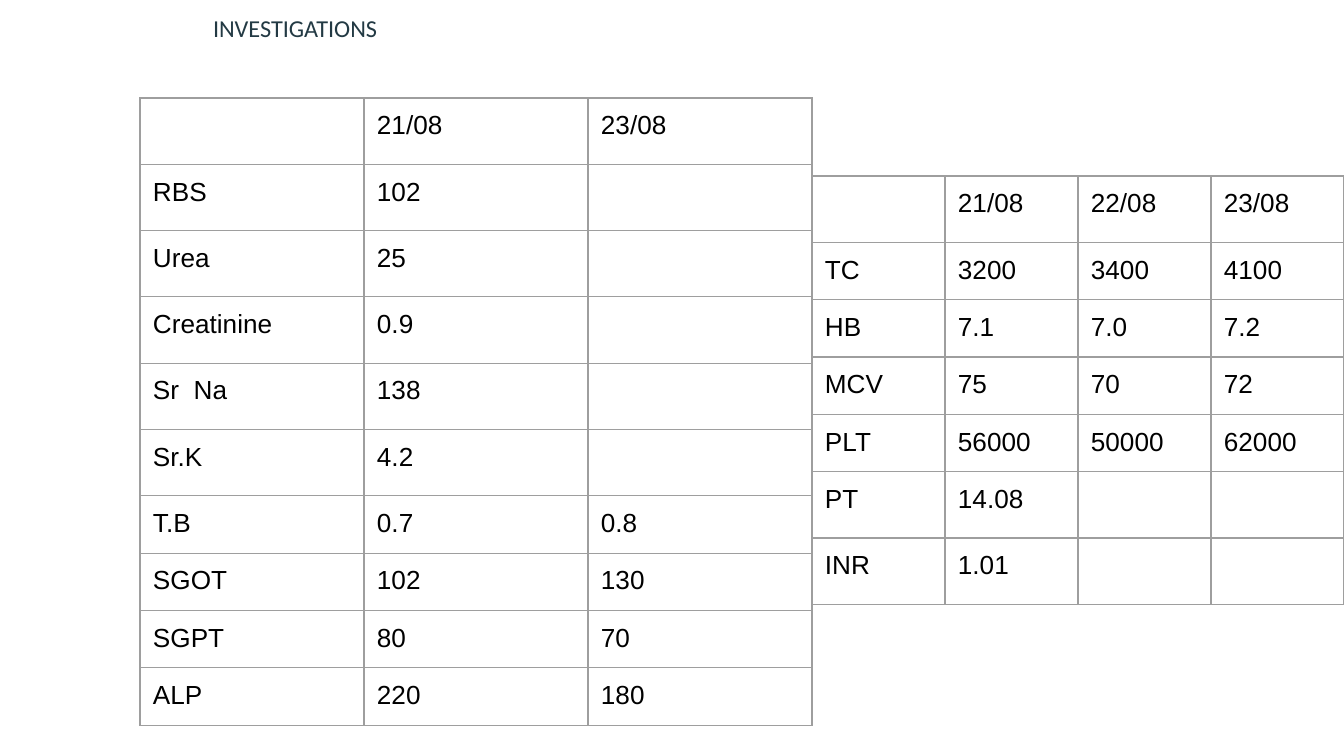
from dataclasses import dataclass

from lxml.etree import SubElement
from pptx import Presentation
from pptx.dml.color import RGBColor
from pptx.enum.text import MSO_ANCHOR, MSO_AUTO_SIZE, PP_ALIGN
from pptx.oxml.ns import qn
from pptx.text.text import Font
from pptx.util import Emu, Pt

EMU_PER_PX = 914400 / 134.4

CHEMISTRY = [
    ("", "21/08", "23/08"),
    ("RBS", "102", ""),
    ("Urea", "25", ""),
    ("Creatinine", "0.9", ""),
    ("Sr  Na", "138", ""),
    ("Sr.K", "4.2", ""),
    ("T.B", "0.7", "0.8"),
    ("SGOT", "102", "130"),
    ("SGPT", "80", "70"),
    ("ALP", "220", "180"),
]
BLOOD_COUNT = [
    ("", "21/08", "22/08", "23/08"),
    ("TC", "3200", "3400", "4100"),
    ("HB", "7.1", "7.0", "7.2"),
    ("MCV", "75", "70", "72"),
    ("PLT", "56000", "50000", "62000"),
    ("PT", "14.08", "", ""),
    ("INR", "1.01", "", ""),
]


def px(length):
    return Emu(round(length * EMU_PER_PX))


@dataclass(frozen=True)
class Theme:
    heading: str = "233A44"
    ink: str = "000000"
    border: str = "9E9E9E"
    heading_font: str = "Calibri"
    body_font: str = "Arial"
    heading_size: float = 13
    body_size: float = 14
    empty_size: float = 18
    border_width: float = 0.75
    inset: int = 13
    row_height: int = 56


class SlideBuilder:
    """Draws styled elements on the current slide."""

    def __init__(self, slide, theme):
        self.slide = slide
        self.theme = theme

    def set_insets(self, target):
        target.margin_left = target.margin_right = px(self.theme.inset)
        target.margin_top = target.margin_bottom = px(self.theme.inset)

    def set_font(self, font, name, size, color):
        font.name = name
        font.size = Pt(size)
        font.color.rgb = RGBColor.from_string(color)

    def title(self, text, left, top, width, height):
        heading = self.slide.shapes.title
        heading.left, heading.top = px(left), px(top)
        heading.width, heading.height = px(width), px(height)
        frame = heading.text_frame
        frame.text = text
        frame.word_wrap = True
        frame.auto_size = MSO_AUTO_SIZE.SHAPE_TO_FIT_TEXT
        frame.vertical_anchor = MSO_ANCHOR.TOP
        self.set_insets(frame)
        paragraph = frame.paragraphs[0]
        paragraph.alignment = PP_ALIGN.LEFT
        theme = self.theme
        self.set_font(paragraph.font, theme.heading_font, theme.heading_size, theme.heading)

    def borders(self, cell):
        properties = cell._tc.get_or_add_tcPr()
        for index, side in enumerate(("a:lnL", "a:lnR", "a:lnT", "a:lnB")):
            line = SubElement(properties, qn(side), w=str(Pt(self.theme.border_width)))
            fill = SubElement(line, qn("a:solidFill"))
            SubElement(fill, qn("a:srgbClr"), val=self.theme.border)
            properties.insert(index, line)

    def cell(self, cell, text):
        theme = self.theme
        self.set_insets(cell)
        cell.fill.background()
        self.borders(cell)
        cell.text = text
        paragraph = cell.text_frame.paragraphs[0]
        if text:
            self.set_font(paragraph.font, theme.body_font, theme.body_size, theme.ink)
        else:
            end_font = Font(paragraph._p.get_or_add_endParaRPr())
            self.set_font(end_font, theme.body_font, theme.empty_size, theme.ink)

    def table(self, records, left, top, column_width):
        row_count, column_count = len(records), len(records[0])
        table = self.slide.shapes.add_table(
            row_count, column_count, px(left), px(top),
            px(column_width * column_count), px(self.theme.row_height * row_count),
        ).table
        table.first_row = table.horz_banding = False
        for column in table.columns:
            column.width = px(column_width)
        for row, record in zip(table.rows, records):
            row.height = px(self.theme.row_height)
            for cell, text in zip(row.cells, record):
                self.cell(cell, text)


def main():
    presentation = Presentation()
    presentation.slide_width, presentation.slide_height = px(1344), px(756)
    slide = presentation.slides.add_slide(presentation.slide_layouts[5])
    builder = SlideBuilder(slide, Theme())
    builder.table(BLOOD_COUNT, left=812, top=176, column_width=133)
    builder.table(CHEMISTRY, left=140, top=98, column_width=224)
    builder.title("INVESTIGATIONS", left=200, top=0, width=1145, height=56)
    presentation.save("out.pptx")


if __name__ == "__main__":
    main()
